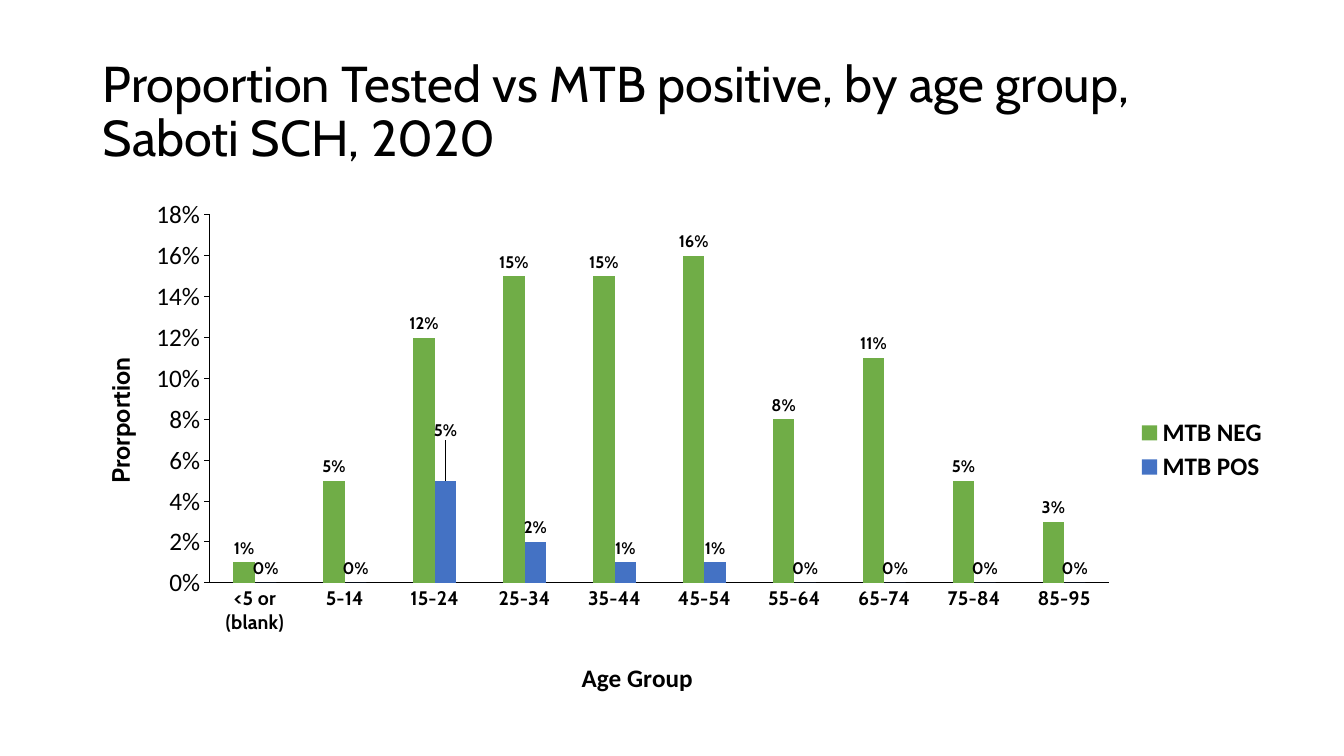
from lxml import etree
from pptx import Presentation
from pptx.chart.data import CategoryChartData
from pptx.dml.color import RGBColor
from pptx.enum.chart import (XL_CHART_TYPE, XL_LABEL_POSITION as LabelPos,
                             XL_LEGEND_POSITION, XL_TICK_MARK as Tick)
from pptx.enum.text import MSO_ANCHOR
from pptx.oxml.ns import qn
from pptx.util import Emu, Pt

EMU_PER_PX = 9071
COLORS = {"text": "000000", "negative": "70AD47", "positive": "4472C4"}
CHART_BOX = (69, 190, 1210, 519)
AGE_GROUPS = ["<5 or (blank)", "5-14", "15-24", "25-34", "35-44",
              "45-54", "55-64", "65-74", "75-84", "85-95"]
RESULTS = [
    ("MTB NEG", "negative",
     [0.01, 0.05, 0.12, 0.15, 0.15, 0.16, 0.08, 0.11, 0.05, 0.03]),
    ("MTB POS", "positive", [0, 0, 0.05, 0.02, 0.01, 0.01, 0, 0, 0, 0]),
]


def px(length):
    return Emu(length * EMU_PER_PX)


def color(name):
    return RGBColor.from_string(COLORS[name])


def style_font(font, size, name, bold=False):
    font.size = Pt(size)
    font.name = name
    font.bold = bold
    font.color.rgb = color("text")


def place(element, index, **settings):
    """Give a chart part a manual layout, as its child number index."""
    for automatic in element.findall(qn("c:layout")):
        element.remove(automatic)
    layout = etree.Element(qn("c:layout"))
    manual = etree.SubElement(layout, qn("c:manualLayout"))
    for tag, value in settings.items():
        etree.SubElement(manual, qn(f"c:{tag}")).set("val", str(value))
    element.insert(index, layout)


def edges(left, top, width=None, height=None):
    """Turn slide pixels into fractions of the chart's box."""
    chart_left, chart_top, chart_width, chart_height = CHART_BOX
    settings = {"xMode": "edge", "yMode": "edge",
                "x": round((left - chart_left) / chart_width, 4),
                "y": round((top - chart_top) / chart_height, 4)}
    if width:
        settings["w"] = round(width / chart_width, 4)
        settings["h"] = round(height / chart_height, 4)
    return settings


def add_title(slide, lines):
    frame = slide.shapes.add_textbox(px(93), px(40), px(1159), px(146)).text_frame
    frame.word_wrap = True
    frame.vertical_anchor = MSO_ANCHOR.MIDDLE
    paragraph = frame.paragraphs[0]
    paragraph.line_spacing = 0.9
    for number, line in enumerate(lines):
        if number:
            paragraph.add_line_break()
        run = paragraph.add_run()
        run.text = line
        style_font(run.font, 36, "Cabin")


def style_axis(axis, title, title_font, title_at, size, name, bold, tick):
    axis.has_major_gridlines = False
    axis.major_tick_mark = tick
    axis.minor_tick_mark = Tick.NONE
    axis.format.line.color.rgb = color("text")
    axis.format.line.width = Pt(0.75)
    style_font(axis.tick_labels.font, size, name, bold)
    run = axis.axis_title.text_frame.paragraphs[0].add_run()
    run.text = title
    style_font(run.font, 18, title_font, True)
    place(axis.axis_title._element, 1, **edges(*title_at))


def style_series(series, color_name):
    series.format.fill.solid()
    series.format.fill.fore_color.rgb = color(color_name)
    series.invert_if_negative = False
    labels = series.data_labels
    labels.show_value = True
    labels.number_format = "0%"
    labels.number_format_is_linked = False
    labels.position = LabelPos.OUTSIDE_END
    style_font(labels.font, 12, "Cabin", True)


def raise_label(series, index, share):
    """Lift one value label by a share of the chart's height."""
    label = series.points[index].data_label
    label.position = LabelPos.OUTSIDE_END
    style_font(label.font, 12, "Cabin", True)
    element = series.data_labels._element.find(qn("c:dLbl"))
    place(element, 1, x=0, y=-share)
    number_format = etree.Element(qn("c:numFmt"), formatCode="0%", sourceLinked="0")
    element.insert(2, number_format)


def add_results_chart(slide):
    data = CategoryChartData(number_format="0%")
    data.categories = AGE_GROUPS
    for name, _, shares in RESULTS:
        data.add_series(name, shares)
    chart = slide.shapes.add_chart(XL_CHART_TYPE.COLUMN_CLUSTERED,
                                   *map(px, CHART_BOX), data).chart
    style_font(chart.font, 10, "Calibri")
    chart.has_title = False

    plot = chart.plots[0]
    plot.gap_width = 219
    plot.overlap = 0
    plot.vary_by_categories = False
    for series, (_, color_name, _) in zip(plot.series, RESULTS):
        style_series(series, color_name)
    raise_label(plot.series[1], 2, 0.07)

    style_axis(chart.category_axis, "Age Group", "Calibri", (577, 656),
               14, "Cabin", True, Tick.NONE)
    shares_axis = chart.value_axis
    style_axis(shares_axis, "Prorportion", "Cabin", (98, 353),
               18, "Calibri", False, Tick.OUTSIDE)
    shares_axis.minimum_scale = 0
    shares_axis.maximum_scale = 0.18
    shares_axis.major_unit = 0.02
    shares_axis.tick_labels.number_format = "0%"
    shares_axis.tick_labels.number_format_is_linked = False

    chart.has_legend = True
    legend = chart.legend
    legend.position = XL_LEGEND_POSITION.RIGHT
    legend.include_in_layout = False
    style_font(legend.font, 18, "Calibri", True)
    place(legend._element, 1, **edges(1134, 414, 136, 72))
    plot_area = chart._chartSpace.find(".//" + qn("c:plotArea"))
    place(plot_area, 0, layoutTarget="inner", **edges(210, 215, 899, 368))


def main():
    deck = Presentation()
    deck.slide_width = px(1344)
    deck.slide_height = px(756)
    slide = deck.slides.add_slide(deck.slide_layouts[6])
    add_title(slide, ["Proportion Tested vs MTB positive, by age group, ",
                      "Saboti SCH, 2020"])
    add_results_chart(slide)
    deck.save("out.pptx")


if __name__ == "__main__":
    main()
